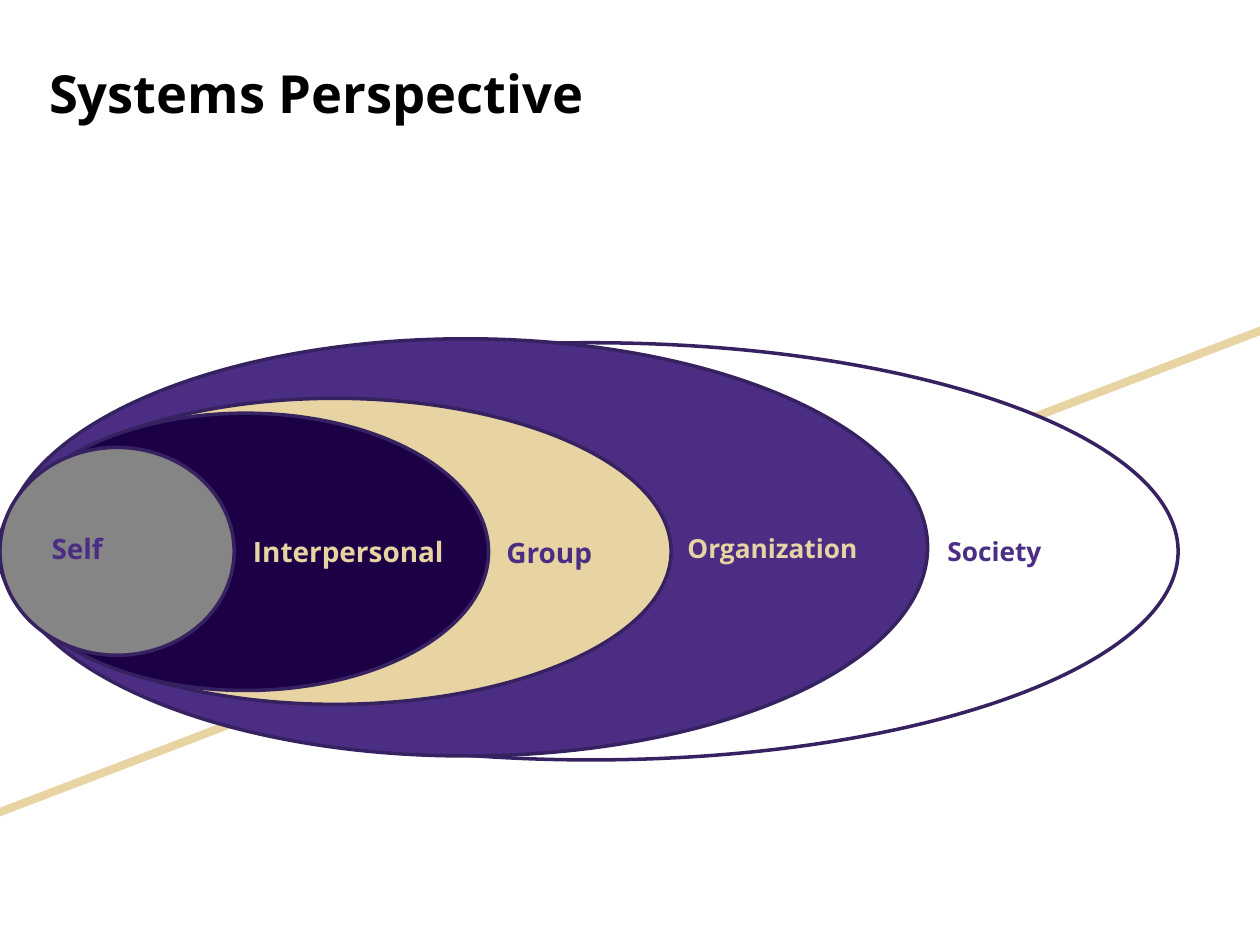
from pptx import Presentation
from pptx.dml.color import RGBColor
from pptx.enum.shapes import MSO_SHAPE
from pptx.enum.text import MSO_ANCHOR, MSO_AUTO_SIZE, PP_ALIGN
from pptx.util import Cm, Pt

WHITE = RGBColor(0xFF, 0xFF, 0xFF)
BLACK = RGBColor(0x00, 0x00, 0x00)
GOLD = RGBColor(0xE8, 0xD3, 0xA2)
PURPLE = RGBColor(0x4B, 0x2E, 0x83)
OUTLINE = RGBColor(0x37, 0x22, 0x61)
DARK_PURPLE = RGBColor(0x1C, 0x00, 0x45)
GRAY = RGBColor(0x85, 0x85, 0x85)
FONT = "Open Sans"

# Content: lengths in centimetres, levels from the outermost to the innermost
TITLE = "Systems Perspective"
SLIDE_WIDTH, SLIDE_HEIGHT = 25.4, 19.05
PANEL_LEFT_HEIGHT, PANEL_RIGHT_HEIGHT = 16.28, 6.58
BACKGROUND_PANELS = [(0.18, GOLD), (0, WHITE)]  # top, fill
LEVELS = [
    # name, ellipse box, fill, label box (left, top, width), size, text colour
    ("Society", (0.08, 6.91, 23.67, 8.41), WHITE, (18.85, 10.54, 6.5), 15, PURPLE),
    ("Organization", (0.08, 6.83, 18.62, 8.41), PURPLE, (13.61, 10.49, 4.78), 15, GOLD),
    ("Group", (-0.03, 8.03, 13.56, 6.17), GOLD, (9.96, 10.54, 3.86), 16, PURPLE),
    ("Interpersonal", (0.05, 8.33, 9.8, 5.59), DARK_PURPLE, (4.85, 10.52, 4.65), 16, GOLD),
    ("Self", (0, 9.02, 4.72, 4.19), GRAY, (0.79, 10.46, 3.07), 16, PURPLE),
]
LABEL_HEIGHT = 2.16


def write_text(shape, text, size, color):
    frame = shape.text_frame
    frame.text = text
    frame.word_wrap = True
    frame.auto_size = MSO_AUTO_SIZE.NONE
    frame.vertical_anchor = MSO_ANCHOR.TOP
    frame.margin_left = frame.margin_right = Cm(0.25)
    frame.margin_top = frame.margin_bottom = Cm(0.25)
    paragraph = frame.paragraphs[0]
    paragraph.alignment = PP_ALIGN.LEFT
    paragraph.line_spacing = 1.0
    paragraph.space_before = Pt(0)
    font = paragraph.runs[0].font
    font.name, font.size, font.bold = FONT, Pt(size), True
    font.color.rgb = color


def add_panel(slide, top, fill):
    builder = slide.shapes.build_freeform(Cm(0), Cm(top))
    corners = [
        (SLIDE_WIDTH, top),
        (SLIDE_WIDTH, top + PANEL_RIGHT_HEIGHT),
        (0, top + PANEL_LEFT_HEIGHT),
    ]
    builder.add_line_segments([(Cm(x), Cm(y)) for x, y in corners], close=True)
    panel = builder.convert_to_shape()
    panel.shadow.inherit = False
    panel.fill.solid()
    panel.fill.fore_color.rgb = fill
    panel.line.fill.background()


def add_ellipse(slide, box, fill):
    ellipse = slide.shapes.add_shape(MSO_SHAPE.OVAL, *map(Cm, box))
    ellipse.shadow.inherit = False
    ellipse.fill.solid()
    ellipse.fill.fore_color.rgb = fill
    ellipse.line.color.rgb = OUTLINE
    ellipse.line.width = Pt(2)


def main():
    presentation = Presentation()
    presentation.slide_width = Cm(SLIDE_WIDTH)
    presentation.slide_height = Cm(SLIDE_HEIGHT)
    slide = presentation.slides.add_slide(presentation.slide_layouts[5])

    # Diagonal background: the gold panel shows as a stripe below the white one
    for top, fill in BACKGROUND_PANELS:
        add_panel(slide, top, fill)

    # Nested levels
    for name, ellipse_box, fill, label_box, size, color in LEVELS:
        add_ellipse(slide, ellipse_box, fill)
    for name, ellipse_box, fill, label_box, size, color in LEVELS:
        label = slide.shapes.add_textbox(*map(Cm, label_box), Cm(LABEL_HEIGHT))
        write_text(label, name, size, color)

    # Title, brought in front of the background
    title = slide.shapes.title
    title.left, title.top = Cm(0.74), Cm(0.97)
    title.width, title.height = Cm(23.67), Cm(3.56)
    write_text(title, TITLE, 30, BLACK)
    slide.shapes.element.append(title.element)

    presentation.save("out.pptx")


if __name__ == "__main__":
    main()
